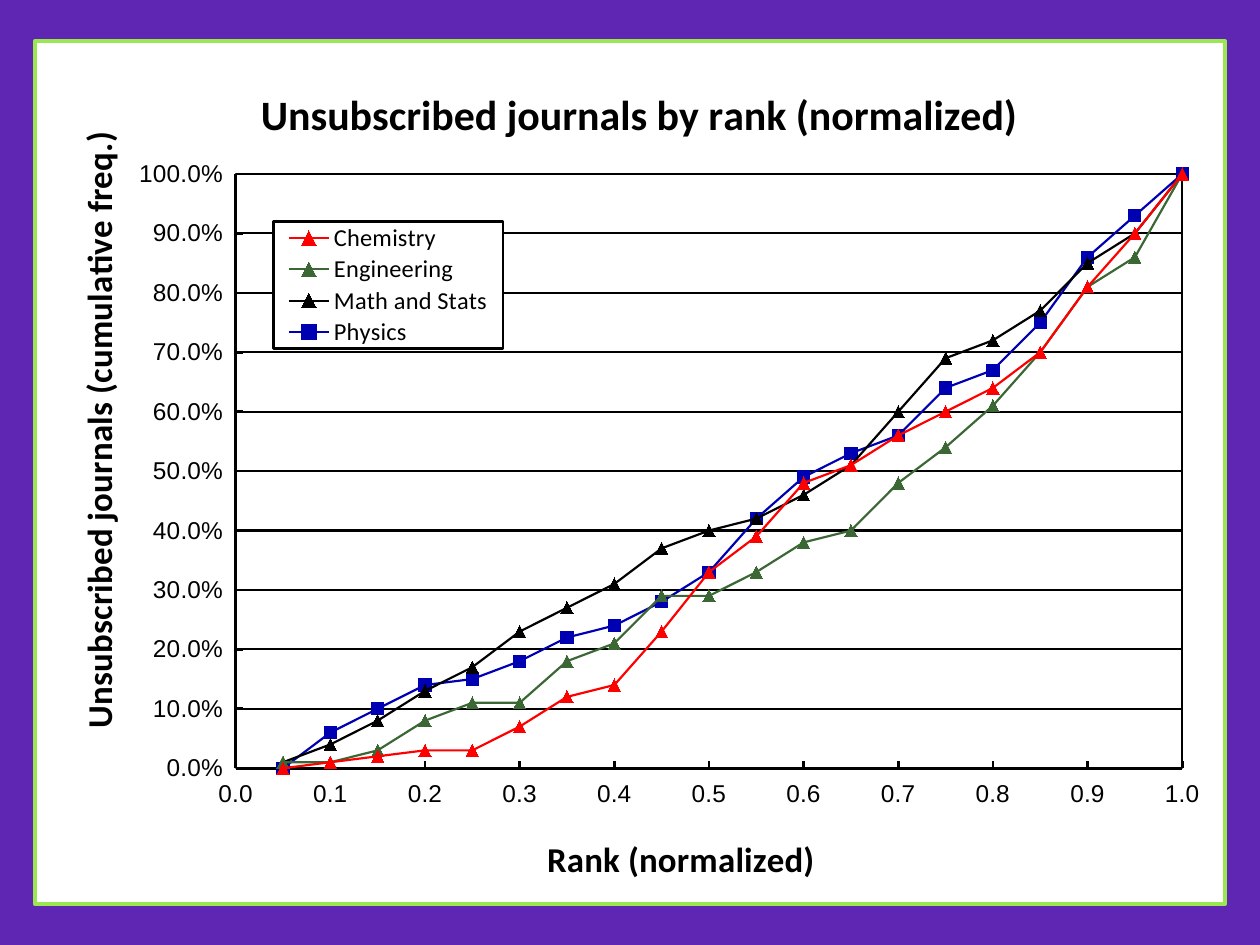
from dataclasses import dataclass

from lxml import etree
from pptx import Presentation
from pptx.chart.data import XyChartData
from pptx.dml.color import RGBColor
from pptx.enum.chart import (
    XL_CHART_TYPE, XL_LEGEND_POSITION, XL_MARKER_STYLE, XL_TICK_LABEL_POSITION, XL_TICK_MARK,
)
from pptx.oxml import parse_xml
from pptx.oxml.ns import qn
from pptx.util import Inches, Pt

SCATTER_LINES = XL_CHART_TYPE.XY_SCATTER_LINES
LEGEND_RIGHT = XL_LEGEND_POSITION.RIGHT
TRIANGLE, SQUARE = XL_MARKER_STYLE.TRIANGLE, XL_MARKER_STYLE.SQUARE
LABELS_LOW = XL_TICK_LABEL_POSITION.LOW
TICK_INSIDE, TICK_NONE = XL_TICK_MARK.INSIDE, XL_TICK_MARK.NONE

PURPLE = RGBColor(0x5F, 0x26, 0xB4)
LIME = RGBColor(0x9B, 0xE7, 0x4F)
WHITE = RGBColor(0xFF, 0xFF, 0xFF)
BLACK = RGBColor(0, 0, 0)
RED = RGBColor(0xFF, 0, 0)
GREEN = RGBColor(0x3A, 0x67, 0x33)
BLUE = RGBColor(0, 0, 0xB3)

CHART_WIDTH, CHART_HEIGHT = 9.48, 6.88
RANKS = [round(step * 0.05, 2) for step in range(1, 21)]


@dataclass(frozen=True)
class Discipline:
    name: str
    color: RGBColor
    marker: XL_MARKER_STYLE
    frequencies: tuple[float, ...]


DISCIPLINES = (
    Discipline("Chemistry", RED, TRIANGLE,
               (0, 0.01, 0.02, 0.03, 0.03, 0.07, 0.12, 0.14, 0.23, 0.33,
                0.39, 0.48, 0.51, 0.56, 0.6, 0.64, 0.7, 0.81, 0.9, 1)),
    Discipline("Engineering", GREEN, TRIANGLE,
               (0.01, 0.01, 0.03, 0.08, 0.11, 0.11, 0.18, 0.21, 0.29, 0.29,
                0.33, 0.38, 0.4, 0.48, 0.54, 0.61, 0.7, 0.81, 0.86, 1)),
    Discipline("Math and Stats", BLACK, TRIANGLE,
               (0.01, 0.04, 0.08, 0.13, 0.17, 0.23, 0.27, 0.31, 0.37, 0.4,
                0.42, 0.46, 0.51, 0.6, 0.69, 0.72, 0.77, 0.85, 0.9, 1)),
    Discipline("Physics", BLUE, SQUARE,
               (0, 0.06, 0.1, 0.14, 0.15, 0.18, 0.22, 0.24, 0.28, 0.33,
                0.42, 0.49, 0.53, 0.56, 0.64, 0.67, 0.75, 0.86, 0.93, 1)),
)


def chart_xml(tag: str, body: str) -> etree.ElementBase:
    return parse_xml(
        f'<c:{tag} xmlns:c="http://schemas.openxmlformats.org/drawingml/2006/chart" '
        f'xmlns:a="http://schemas.openxmlformats.org/drawingml/2006/main">{body}</c:{tag}>')


def frame_xml(fill: RGBColor, line: RGBColor, points: float) -> etree.ElementBase:
    return chart_xml("spPr", (
        f'<a:solidFill><a:srgbClr val="{fill}"/></a:solidFill>'
        f'<a:ln w="{Pt(points)}"><a:solidFill><a:srgbClr val="{line}"/></a:solidFill></a:ln>'))


def place(part: etree.ElementBase, left: float, top: float,
          width: float = 0, height: float = 0) -> None:
    for old in part.findall(qn("c:layout")):
        part.remove(old)
    target = '<c:layoutTarget val="inner"/>' if part.tag == qn("c:plotArea") else ""
    settings = {"xMode": "edge", "yMode": "edge",
                "x": left / CHART_WIDTH, "y": top / CHART_HEIGHT}
    if width:
        settings |= {"w": width / CHART_WIDTH, "h": height / CHART_HEIGHT}
    values = "".join(f'<c:{key} val="{value}"/>' for key, value in settings.items())
    layout = chart_xml("layout", f"<c:manualLayout>{target}{values}</c:manualLayout>")
    part.insert(0 if target else 1, layout)


def write_title(title, text: str, size: int, left: float, top: float,
                rotation: int = 0) -> None:
    title.text_frame.text = text
    font = title.text_frame.paragraphs[0].runs[0].font
    font.name, font.size, font.bold = "Calibri", Pt(size), True
    font.color.rgb = BLACK
    heading = title.text_frame._txBody.getparent().getparent()
    heading.find(".//" + qn("a:bodyPr")).set("rot", str(rotation * 60000))
    place(heading, left, top)


def style_axis(axis, number_format: str, gridlines: bool) -> None:
    axis.minimum_scale, axis.maximum_scale, axis.major_unit = 0, 1, 0.1
    axis.has_major_gridlines = gridlines
    axis.major_tick_mark, axis.minor_tick_mark = TICK_INSIDE, TICK_NONE
    axis.tick_label_position = LABELS_LOW
    axis.tick_labels.number_format = number_format
    axis.tick_labels.number_format_is_linked = False
    font = axis.tick_labels.font
    font.name, font.size, font.bold = "Arial", Pt(14), False
    font.color.rgb = BLACK
    axis.format.line.color.rgb = BLACK
    axis.format.line.width = Pt(1.5)
    if gridlines:
        grid = axis.major_gridlines.format.line
        grid.color.rgb = BLACK
        grid.width = Pt(1.25)


def style_series(series, discipline: Discipline) -> None:
    series.smooth = False
    series.format.line.color.rgb = discipline.color
    series.format.line.width = Pt(1.25)
    marker = series.marker
    marker.style, marker.size = discipline.marker, 7
    marker.format.fill.solid()
    marker.format.fill.fore_color.rgb = discipline.color
    marker.format.line.color.rgb = discipline.color


def style_legend(chart) -> None:
    chart.has_legend = True
    legend = chart.legend
    legend.position = LEGEND_RIGHT
    legend.include_in_layout = True
    legend.font.name, legend.font.size = "Calibri", Pt(14)
    legend.font.color.rgb = BLACK
    part = legend._element
    place(part, 1.9, 1.44, 1.83, 1.01)
    part.find(qn("c:overlay")).addnext(frame_xml(WHITE, BLACK, 1.5))


def add_rank_chart(slide) -> None:
    data = XyChartData(number_format="0.0%")
    for discipline in DISCIPLINES:
        points = data.add_series(discipline.name)
        for rank, frequency in zip(RANKS, discipline.frequencies):
            points.add_data_point(rank, frequency)
    chart = slide.shapes.add_chart(
        SCATTER_LINES, Inches(0.26), Inches(0.31),
        Inches(CHART_WIDTH), Inches(CHART_HEIGHT), data).chart
    chart.font.name, chart.font.size = "Arial", Pt(10)
    chart.plots[0].vary_by_categories = False
    for series, discipline in zip(chart.plots[0].series, DISCIPLINES):
        style_series(series, discipline)

    rank_axis, frequency_axis = chart.category_axis, chart.value_axis
    style_axis(rank_axis, "#,##0.0", False)
    style_axis(frequency_axis, "0.0%", True)
    chart.has_title = True
    write_title(chart.chart_title, "Unsubscribed journals by rank (normalized)", 24, 1.74, 0.3)
    write_title(rank_axis.axis_title, "Rank (normalized)", 20, 4.03, 6.28)
    write_title(frequency_axis.axis_title, "Unsubscribed journals (cumulative freq.)",
                20, 0.26, 0.68, rotation=-90)
    style_legend(chart)

    body = chart._chartSpace.find(qn("c:chart"))
    plot_area = body.find(qn("c:plotArea"))
    place(plot_area, 1.6, 1.06, 7.54, 4.74)
    plot_area.append(frame_xml(WHITE, BLACK, 1.25))
    body.addnext(frame_xml(WHITE, LIME, 2.5))


def main() -> None:
    deck = Presentation()
    deck.slide_width, deck.slide_height = Inches(10), Inches(7.5)
    slide = deck.slides.add_slide(deck.slide_layouts[6])
    slide.background.fill.solid()
    slide.background.fill.fore_color.rgb = PURPLE
    add_rank_chart(slide)
    deck.save("out.pptx")


if __name__ == "__main__":
    main()
